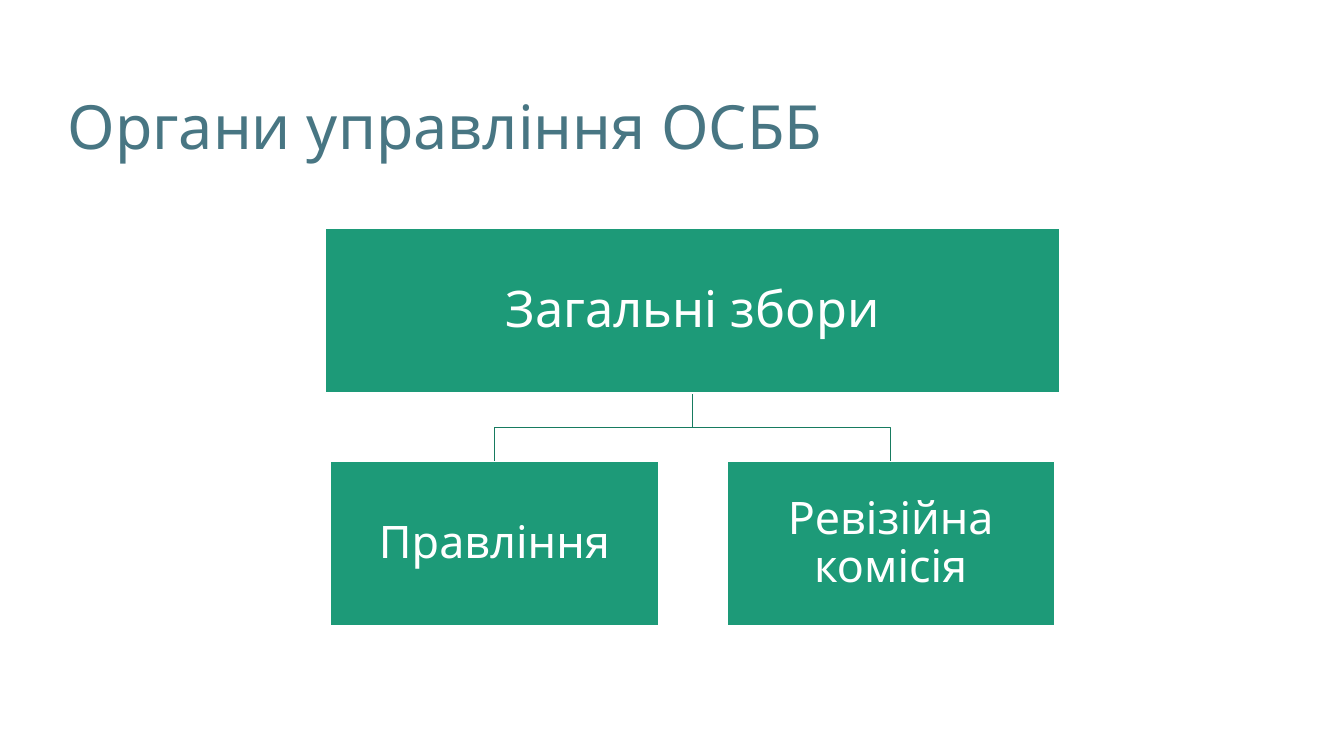
from dataclasses import dataclass

from pptx import Presentation
from pptx.dml.color import RGBColor as Rgb
from pptx.enum.shapes import MSO_SHAPE as Form
from pptx.enum.text import MSO_ANCHOR as Anchor, PP_ALIGN as Align
from pptx.shapes.autoshape import Shape
from pptx.slide import Slide
from pptx.util import Inches, Pt


@dataclass(frozen=True)
class Theme:
    """Colours, font and type sizes of the slide."""
    font: str = "Noto Sans"
    title: str = "487683"
    box: str = "1D9A78"
    link: str = "177B60"
    white: str = "FFFFFF"
    head: float = 43.5
    top: float = 36
    sub: float = 32
    line: float = 1


@dataclass(frozen=True)
class Node:
    """A box of the chart, in inches."""
    text: str
    left: float
    top: float
    width: float
    height: float
    size: float
    inset: float

    @property
    def mid(self) -> float:
        """Return the horizontal centre."""
        return self.left + self.width / 2

    @property
    def foot(self) -> float:
        """Return the lower edge."""
        return self.top + self.height


THEME = Theme()
HIGH = 1.63
ROOT = Node("Загальні збори", 3.23, 2.27, 7.28, HIGH, THEME.top, 0.03)
NAMES = ("Правління", "Ревізійна комісія")
WIDE, STEP = 3.25, 3.93
START = ROOT.mid - (WIDE + STEP) / 2
NODES = [Node(name, START + i * STEP, 4.58, WIDE, HIGH, THEME.sub, 0.02)
         for i, name in enumerate(NAMES)]


def put_text(shape: Shape, text: str, *, size: float, color: str,
             align: Align = Align.LEFT, inset: float = 0,
             space: float = 1) -> None:
    """Write formatted text into a shape."""
    frame = shape.text_frame
    frame.word_wrap = True
    frame.vertical_anchor = Anchor.MIDDLE
    frame.margin_left = frame.margin_right = Inches(inset)
    frame.margin_top = frame.margin_bottom = Inches(inset)
    para = frame.paragraphs[0]
    para.alignment = align
    para.line_spacing = space
    run = para.add_run()
    run.text = text
    run.font.name = THEME.font
    run.font.size = Pt(size)
    run.font.color.rgb = Rgb.from_string(color)


def set_line(shape: Shape, color: str) -> None:
    """Give a shape a plain outline without shadow."""
    shape.shadow.inherit = False
    shape.line.color.rgb = Rgb.from_string(color)
    shape.line.width = Pt(THEME.line)


def draw_link(slide: Slide, start: Node, end: Node) -> None:
    """Draw a bent line from a box down to its child."""
    half = (start.foot + end.top) / 2
    spots = ((start.mid, start.foot), (start.mid, half),
             (end.mid, half), (end.mid, end.top))
    first, *rest = [(Inches(x), Inches(y)) for x, y in spots]
    pen = slide.shapes.build_freeform(*first)
    pen.add_line_segments(rest, close=False)
    link = pen.convert_to_shape()
    link.fill.background()
    set_line(link, THEME.link)


def draw_node(slide: Slide, node: Node) -> None:
    """Draw a filled box with centred text."""
    box = slide.shapes.add_shape(
        Form.RECTANGLE, Inches(node.left), Inches(node.top),
        Inches(node.width), Inches(node.height))
    box.fill.solid()
    box.fill.fore_color.rgb = Rgb.from_string(THEME.box)
    set_line(box, THEME.white)
    put_text(box, node.text, size=node.size, color=THEME.white,
             align=Align.CENTER, inset=node.inset, space=0.9)


def main() -> None:
    """Build and save the slide."""
    deck = Presentation()
    deck.slide_width, deck.slide_height = Inches(13.33), Inches(7.5)
    slide = deck.slides.add_slide(deck.slide_layouts[6])
    title = slide.shapes.add_textbox(
        Inches(0.67), Inches(0.95), Inches(12), Inches(0.59))
    put_text(title, "Органи управління ОСББ", size=THEME.head,
             color=THEME.title)
    for node in reversed(NODES):
        draw_link(slide, ROOT, node)
    for node in (ROOT, *NODES):
        draw_node(slide, node)
    deck.save("out.pptx")


if __name__ == "__main__":
    main()
